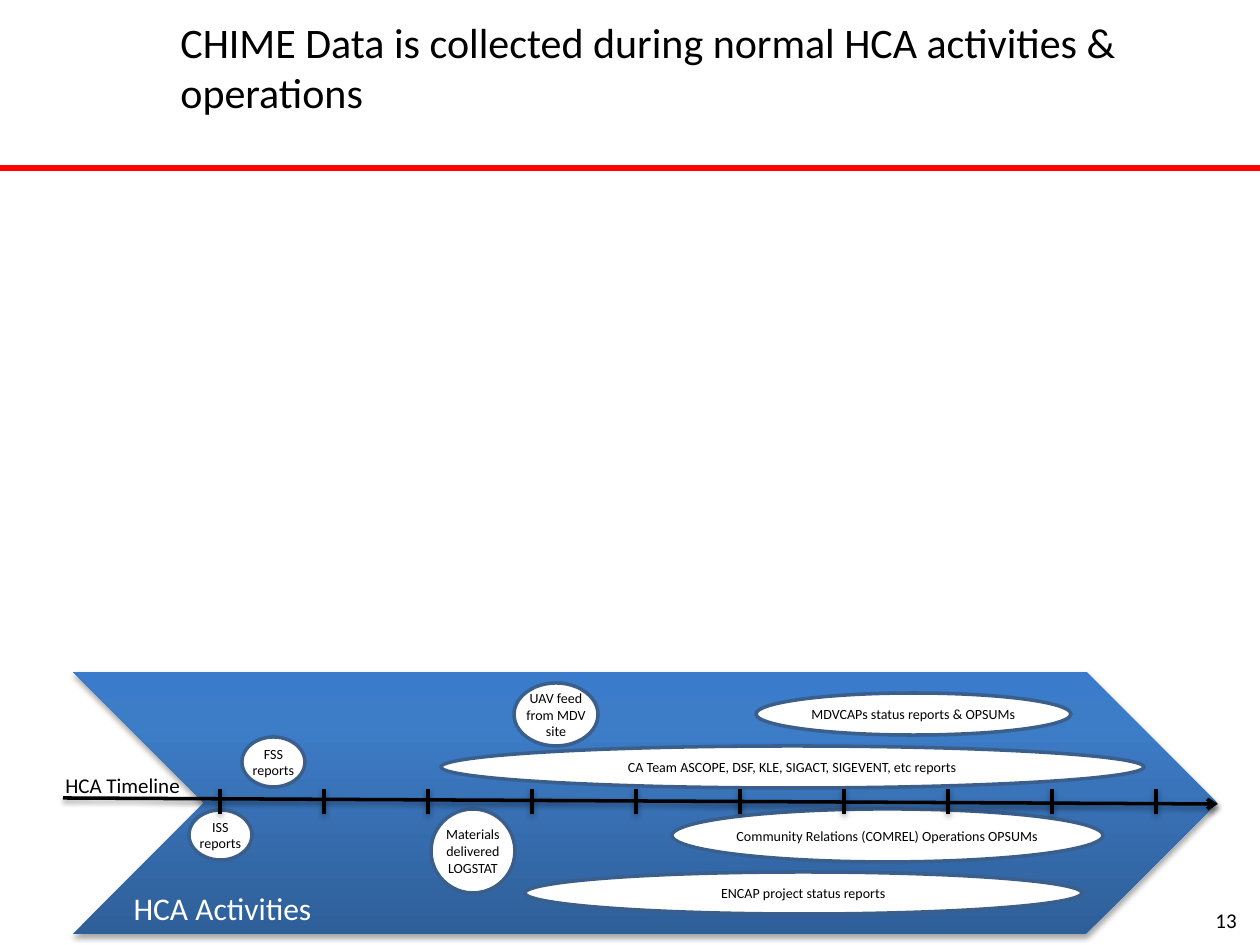
from copy import deepcopy

from lxml import etree
from pptx import Presentation
from pptx.dml.color import RGBColor
from pptx.enum.shapes import MSO_CONNECTOR, MSO_SHAPE
from pptx.enum.text import MSO_ANCHOR, PP_ALIGN
from pptx.oxml import parse_xml
from pptx.oxml.ns import nsdecls, qn
from pptx.util import Pt

STRAIGHT = MSO_CONNECTOR.STRAIGHT
CHEVRON, OVAL = MSO_SHAPE.CHEVRON, MSO_SHAPE.OVAL
LEFT, CENTER, RIGHT = PP_ALIGN.LEFT, PP_ALIGN.CENTER, PP_ALIGN.RIGHT
TOP, MIDDLE = MSO_ANCHOR.TOP, MSO_ANCHOR.MIDDLE

BLACK = RGBColor(0x00, 0x00, 0x00)
WHITE = RGBColor(0xFF, 0xFF, 0xFF)
RED = RGBColor(0xFF, 0x00, 0x00)
OVAL_EDGE = RGBColor(0x3A, 0x5F, 0x8C)
GRADIENT = [
    (0, RGBColor(0x2F, 0x5F, 0x99)),
    (0.8, RGBColor(0x3D, 0x7C, 0xC7)),
    (1, RGBColor(0x3A, 0x7C, 0xCB)),
]
FONT = "Calibri"
PX_PER_INCH = 126
SLIDE_WIDTH, SLIDE_HEIGHT = 1260, 945

REPORTS = [
    ("FSS reports", 169, 65, 63, 50),
    ("ENCAP project status reports", 452, 200, 557, 42),
    ("Community Relations (COMREL) Operations OPSUMs", 599, 137, 431, 53),
    ("CA Team ASCOPE, DSF, KLE, SIGACT, SIGEVENT, etc reports", 368, 74, 703, 42),
    ("Materials delivered LOGSTAT", 358, 137, 84, 84),
    ("MDVCAPs status reports & OPSUMs", 683, 21, 315, 42),
    ("ISS reports", 116, 138, 63, 50),
    ("UAV feed from MDV site", 441, 11, 84, 63),
]


def emu(pixels):
    """Convert a length in px to EMU."""
    return round(pixels * 914400 / PX_PER_INCH)


def set_shadow(shape, opacity, distance):
    """Give a shape a soft black shadow below it."""
    properties = shape._element.spPr
    properties.append(parse_xml(
        f'<a:effectLst {nsdecls("a")}><a:outerShdw blurRad="{Pt(3.1)}" '
        f'dist="{Pt(distance)}" dir="5400000" rotWithShape="0">'
        f'<a:srgbClr val="000000"><a:alpha val="{opacity * 1000}"/></a:srgbClr>'
        '</a:outerShdw></a:effectLst>'))


def write_text(frame, text, size, color, alignment):
    """Write one paragraph into a text frame."""
    paragraph = frame.paragraphs[0]
    paragraph.text = text
    paragraph.alignment = alignment
    paragraph.font.name = FONT
    paragraph.font.size = Pt(size)
    paragraph.font.color.rgb = color


def add_label(slide, box, text, size, color=BLACK, alignment=LEFT, anchor=TOP, wrap=True):
    """Add a text box with one paragraph."""
    frame = slide.shapes.add_textbox(*map(emu, box)).text_frame
    frame.word_wrap = wrap
    frame.vertical_anchor = anchor
    write_text(frame, text, size, color, alignment)


def add_line(slide, start, end, color, width):
    """Add a straight line."""
    line = slide.shapes.add_connector(STRAIGHT, *map(emu, start + end))
    line.line.color.rgb = color
    line.line.width = Pt(width)
    return line


def add_header(slide, box):
    """Add the title with a red rule below it."""
    left, top, width, height = box
    add_label(slide, (left + 168, top + 10, 1018, 158),
              "CHIME Data is collected during normal HCA activities & operations", 24)
    rule = add_line(slide, (left, top + height), (left + width, top + height), RED, 3)
    etree.SubElement(rule._element.spPr, qn("a:effectLst"))


def add_activities(slide, box):
    """Add the chevron with its caption and report ovals."""
    left, top, width, height = box
    chevron = slide.shapes.add_shape(CHEVRON, *map(emu, box))
    chevron.line.fill.background()
    chevron.fill.gradient()
    chevron.fill.gradient_angle = 90
    stop_list = chevron._element.spPr.find(".//" + qn("a:gsLst"))
    stop_list.append(deepcopy(stop_list[-1]))
    for stop, (position, color) in zip(chevron.fill.gradient_stops, GRADIENT):
        stop.position = position
        stop.color.rgb = color
    set_shadow(chevron, 35, 1.8)
    add_label(slide, (left + 47, top + 211, 205, 50), "HCA Activities", 18,
              WHITE, CENTER, wrap=False)
    for text, x, y, oval_width, oval_height in REPORTS:
        add_report(slide, (left + x, top + y, oval_width, oval_height), text)


def add_report(slide, box, text):
    """Add a white oval naming a kind of report."""
    oval = slide.shapes.add_shape(OVAL, *map(emu, box))
    oval.shadow.inherit = False
    oval.fill.solid()
    oval.fill.fore_color.rgb = WHITE
    oval.line.color.rgb = OVAL_EDGE
    oval.line.width = Pt(2)
    frame = oval.text_frame
    frame.word_wrap = True
    frame.vertical_anchor = MIDDLE
    frame.margin_left = frame.margin_top = frame.margin_right = frame.margin_bottom = 0
    write_text(frame, text, 8, BLACK, CENTER)


def add_timeline(slide, box):
    """Add the labelled time arrow with evenly spaced ticks."""
    left, top, width, height = box
    add_label(slide, (left - 10, top - 23, 141, 38), "HCA Timeline", 12, wrap=False)
    arrow = add_line(slide, (left, top + 9), (left + width, top + 15), BLACK, 2)
    arrow.line._get_or_add_ln().append(parse_xml(f'<a:tailEnd {nsdecls("a")} type="arrow"/>'))
    set_shadow(arrow, 38, 1.6)
    for index in range(10):
        x = left + 157 + 104 * index
        tick = add_line(slide, (x, top), (x, top + height), BLACK, 2)
        set_shadow(tick, 38, 1.6)


def main():
    """Build and save the slide."""
    presentation = Presentation()
    presentation.slide_width = emu(SLIDE_WIDTH)
    presentation.slide_height = emu(SLIDE_HEIGHT)
    slide = presentation.slides.add_slide(presentation.slide_layouts[6])
    add_header(slide, (0, 0, SLIDE_WIDTH, 168))
    add_activities(slide, (73, 672, 1144, 262))
    add_timeline(slide, (63, 789, 1155, 25))
    add_label(slide, (955, 895, 294, 50), "13", 12, alignment=RIGHT, anchor=MIDDLE)
    presentation.save("out.pptx")


if __name__ == "__main__":
    main()
